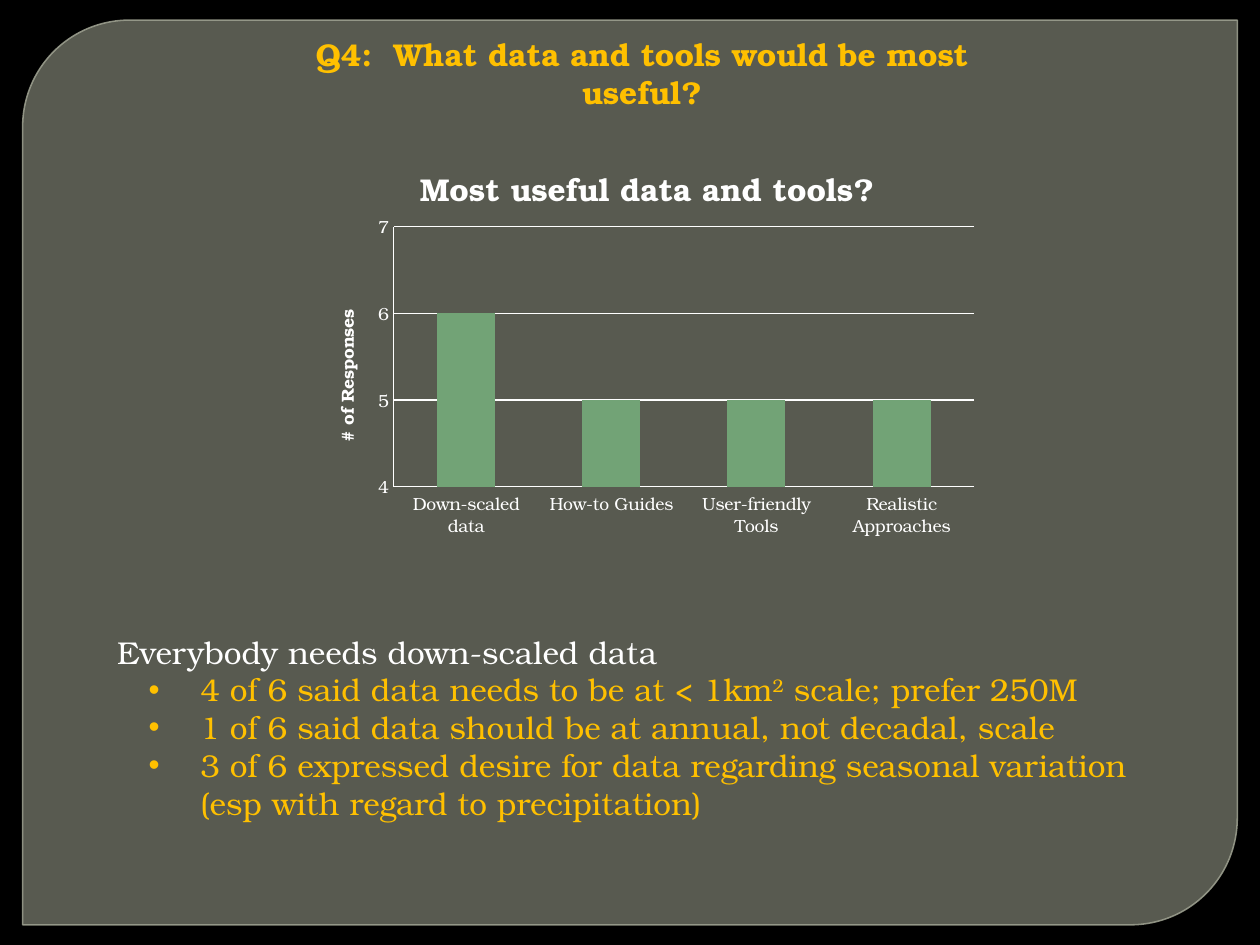
from dataclasses import dataclass

from pptx import Presentation
from pptx.chart.data import CategoryChartData
from pptx.dml.color import RGBColor
from pptx.enum.chart import XL_CHART_TYPE as ChartType, XL_TICK_MARK as TickMark
from pptx.enum.shapes import MSO_SHAPE as Shape
from pptx.enum.text import MSO_ANCHOR as Anchor, MSO_AUTO_SIZE as AutoSize, PP_ALIGN as Align
from pptx.oxml import parse_xml
from pptx.oxml.ns import nsdecls, qn
from pptx.util import Inches, Pt


@dataclass(frozen=True)
class Theme:
    font: str = "TeX Gyre Bonum"
    back: str = "000000"
    panel: str = "888B7B"
    edge: str = "9DA090"
    accent: str = "FFC000"
    light: str = "FFFFFF"
    bar: str = "72A376"
    large: int = 18
    small: int = 10


THEME = Theme()
TITLE = "Q4:  What data and tools would be most useful?"
CHART_TITLE = "Most useful data and tools?"
AXIS_TITLE = "# of Responses"
RESPONSES = {
    "Down-scaled data": 6,
    "How-to Guides": 5,
    "User-friendly Tools": 5,
    "Realistic Approaches": 5,
}
LEAD = "Everybody needs down-scaled data"
FINDINGS = [
    [("4 of 6 said data needs to be at < 1km", False), ("2", True), (" scale; prefer 250M", False)],
    [("1 of 6 said data should be at annual, not decadal, scale", False)],
    [("3 of 6 expressed desire for data regarding seasonal variation "
      "(esp with regard to precipitation)", False)],
]
AREAS = {
    "panel": (0.18, 0.16, 9.64, 7.18),
    "title": (2.08, 0.38, 6.03, 0.4),
    "chart": (2.42, 1, 5.42, 3.33),
    "body": (0.83, 4.97, 8.75, 1.62),
}


def area(name):
    return [Inches(length) for length in AREAS[name]]


def color(value):
    return RGBColor.from_string(value)


def style(font, size, shade, bold=False):
    font.name, font.size, font.bold = THEME.font, Pt(size), bold
    font.color.rgb = color(shade)


def set_alpha(fill, percent):
    fill.find(".//" + qn("a:srgbClr")).append(
        parse_xml(f'<a:alpha {nsdecls("a")} val="{percent * 1000}"/>'))


def add_panel(page):
    panel = page.shapes.add_shape(Shape.ROUND_2_DIAG_RECTANGLE, *area("panel"))
    panel.adjustments[0] = 0.118
    panel.shadow.inherit = False
    panel.fill.solid()
    panel.fill.fore_color.rgb = color(THEME.panel)
    panel.line.color.rgb = color(THEME.edge)
    panel.line.width = Pt(0.87)
    properties = panel.element.spPr
    set_alpha(properties.find(qn("a:solidFill")), 65)
    set_alpha(properties.find(qn("a:ln")), 88)
    page.shapes.element.insert(2, panel.element)


def place(holder, name):
    holder.left, holder.top, holder.width, holder.height = area(name)
    frame = holder.text_frame
    frame.word_wrap = True
    frame.auto_size = AutoSize.SHAPE_TO_FIT_TEXT
    return frame


def add_title(page):
    frame = place(page.shapes.title, "title")
    frame.vertical_anchor = Anchor.MIDDLE
    frame.text = TITLE
    para = frame.paragraphs[0]
    para.alignment = Align.CENTER
    style(para.runs[0].font, THEME.large, THEME.accent, True)


def set_indent(para, margin, hanging, bullet):
    properties = para._p.get_or_add_pPr()
    properties.set("marL", str(Inches(margin)))
    properties.set("indent", str(-Inches(hanging)))
    properties.append(parse_xml(bullet))


def add_body(page):
    frame = place(page.placeholders[1], "body")
    frame.vertical_anchor = Anchor.TOP
    frame.text = LEAD
    lead = frame.paragraphs[0]
    lead.space_before = Pt(0)
    style(lead.runs[0].font, THEME.large, THEME.light)
    set_indent(lead, 0, 0, f'<a:buNone {nsdecls("a")}/>')
    for finding in FINDINGS:
        para = frame.add_paragraph()
        para.level = 1
        para.space_before = Pt(0)
        set_indent(para, 0.66, 0.41, f'<a:buChar {nsdecls("a")} char="•"/>')
        for text, raised in finding:
            span = para.add_run()
            span.text = text
            style(span.font, THEME.large, THEME.accent)
            if raised:
                span._r.get_or_add_rPr().set("baseline", "30000")


def set_layout(parent, position, **shares):
    for old in parent.findall(qn("c:layout")):
        parent.remove(old)
    modes = '<c:xMode val="edge"/><c:yMode val="edge"/>'
    values = "".join(f'<c:{key} val="{share}"/>' for key, share in shares.items())
    target = '<c:layoutTarget val="inner"/>' if "w" in shares else ""
    parent.insert(position, parse_xml(
        f'<c:layout {nsdecls("c")}><c:manualLayout>{target}{modes}{values}'
        "</c:manualLayout></c:layout>"))


def set_heading(owner, text, size):
    frame = owner.text_frame
    frame.text = text
    style(frame.paragraphs[0].runs[0].font, size, THEME.light, True)


def add_chart(page):
    data = CategoryChartData()
    data.categories = list(RESPONSES)
    data.add_series("Series 1", list(RESPONSES.values()))
    chart = page.shapes.add_chart(ChartType.COLUMN_CLUSTERED, *area("chart"), data).chart
    style(chart.font, THEME.small, THEME.light)
    chart.has_legend = False
    chart.has_title = True
    set_heading(chart.chart_title, CHART_TITLE, THEME.large)

    values = chart.value_axis
    values.minimum_scale, values.maximum_scale, values.major_unit = 4, 7, 1
    values.has_major_gridlines = True
    values.has_title = True
    set_heading(values.axis_title, AXIS_TITLE, THEME.small)
    for axis in (values, chart.category_axis):
        axis.major_tick_mark = axis.minor_tick_mark = TickMark.NONE
    for owner in (values, chart.category_axis, values.major_gridlines):
        owner.format.line.color.rgb = color(THEME.light)
        owner.format.line.width = Pt(0.75)

    plot = chart.plots[0]
    plot.gap_width = 150
    plot.vary_by_categories = False
    fill = plot.series[0].format.fill
    fill.solid()
    fill.fore_color.rgb = color(THEME.bar)

    root = chart.element.find(qn("c:chart"))
    set_layout(root.find(qn("c:title")), 1, x=0.16, y=0.07)
    set_layout(root.find(qn("c:plotArea")), 0, x=0.13, y=0.24, w=0.85, h=0.62)


def main():
    deck = Presentation()
    deck.slide_width, deck.slide_height = Inches(10), Inches(7.5)
    page = deck.slides.add_slide(deck.slide_layouts[1])
    page.background.fill.solid()
    page.background.fill.fore_color.rgb = color(THEME.back)
    add_panel(page)
    add_title(page)
    add_chart(page)
    add_body(page)
    deck.save("out.pptx")


if __name__ == "__main__":
    main()
